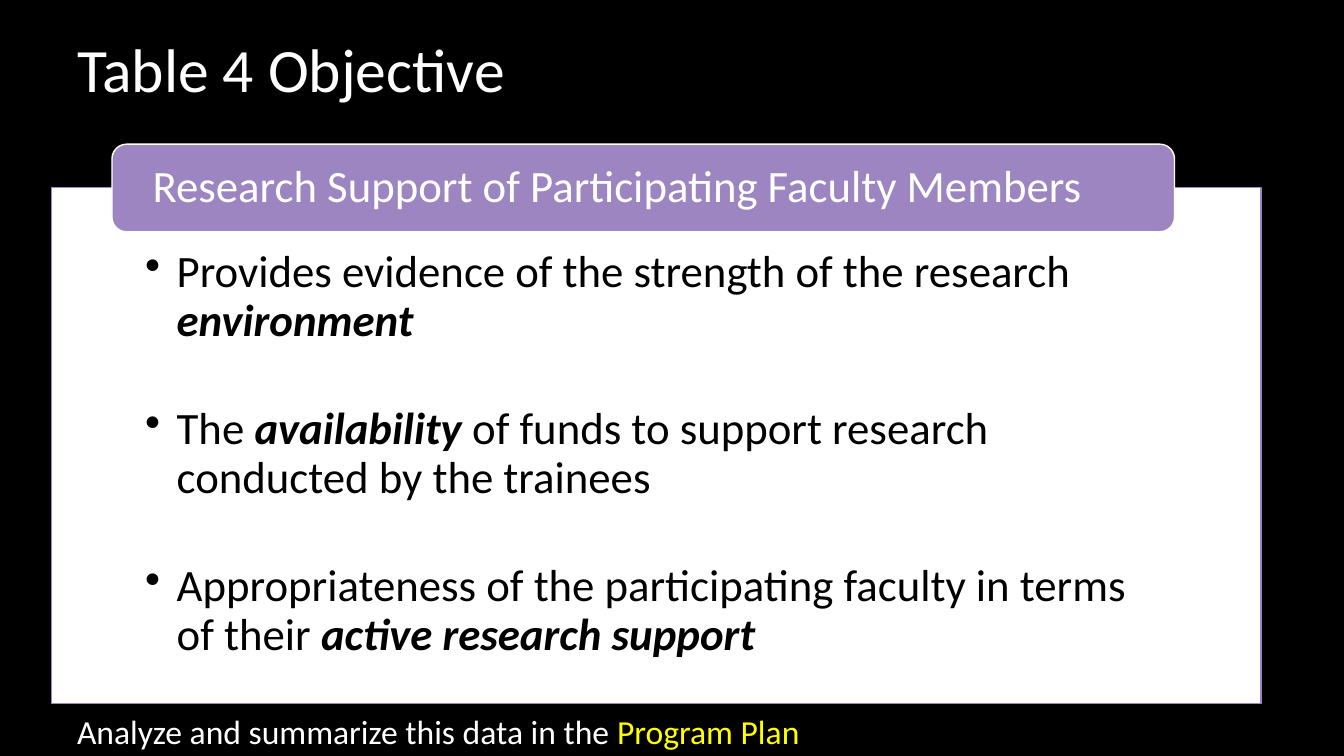
from dataclasses import dataclass

from lxml.etree import SubElement
from pptx import Presentation
from pptx.dml.color import RGBColor
from pptx.enum.shapes import MSO_SHAPE as Preset
from pptx.enum.text import MSO_ANCHOR as Anchor, PP_ALIGN as Align
from pptx.oxml.ns import qn
from pptx.util import Pt

COLORS = {
    "black": "000000",
    "white": "FFFFFF",
    "purple": "9C85C0",
    "yellow": "FFFF00",
}
FONT = "Calibri"


@dataclass(frozen=True)
class Span:
    text: str
    strong: bool = False
    color: str | None = None


@dataclass(frozen=True)
class Box:
    left: float
    top: float
    width: float
    height: float


@dataclass(frozen=True)
class Panel:
    preset: Preset
    box: Box
    fill: str
    line: str
    insets: tuple[float, float]
    anchor: Anchor


OBJECTIVES = [
    [Span("Provides evidence of the strength of the research "),
     Span("environment", strong=True)],
    [Span("The "), Span("availability", strong=True),
     Span(" of funds to support research conducted by the trainees")],
    [Span("Appropriateness of the participating faculty in terms of their "),
     Span("active research support", strong=True)],
]
OBJECTIVES_PANEL = Panel(Preset.RECTANGLE, Box(36.7, 134, 864, 368.6),
                         "white", "purple", (67, 44), Anchor.TOP)
HEADING_PANEL = Panel(Preset.ROUNDED_RECTANGLE, Box(80, 103, 759, 62.6),
                      "purple", "white", (26, 3), Anchor.MIDDLE)


def rgb(name: str) -> RGBColor:
    return RGBColor.from_string(COLORS[name])


def place(shape, box: Box) -> None:
    shape.left, shape.top = Pt(box.left), Pt(box.top)
    shape.width, shape.height = Pt(box.width), Pt(box.height)


def write(paragraph, spans: list[Span], size: float, color: str,
          spacing: float = 1.0) -> None:
    paragraph.alignment = Align.LEFT
    paragraph.line_spacing = spacing
    paragraph.font.name = FONT
    paragraph.font.size = Pt(size)
    paragraph.font.color.rgb = rgb(color)
    for span in spans:
        run = paragraph.add_run()
        run.text = span.text
        if span.strong:
            run.font.bold = run.font.italic = True
        if span.color:
            run.font.color.rgb = rgb(span.color)


def add_bullet(paragraph, indent: float) -> None:
    properties = paragraph._p.get_or_add_pPr()
    properties.set("marL", str(Pt(indent)))
    properties.set("indent", str(-Pt(indent)))
    SubElement(properties, qn("a:buChar"), char="•")


def add_panel(slide, panel: Panel):
    shape = slide.shapes.add_shape(panel.preset, 0, 0, 0, 0)
    place(shape, panel.box)
    shape.shadow.inherit = False
    shape.fill.solid()
    shape.fill.fore_color.rgb = rgb(panel.fill)
    shape.line.color.rgb = rgb(panel.line)
    shape.line.width = Pt(1)
    frame = shape.text_frame
    frame.word_wrap = True
    frame.vertical_anchor = panel.anchor
    side, top = panel.insets
    frame.margin_left = frame.margin_right = Pt(side)
    frame.margin_top = frame.margin_bottom = Pt(top)
    return frame


def main() -> None:
    presentation = Presentation()
    presentation.slide_width, presentation.slide_height = Pt(960), Pt(540)
    slide = presentation.slides.add_slide(presentation.slide_layouts[5])
    slide.background.fill.solid()
    slide.background.fill.fore_color.rgb = rgb("black")

    title = slide.shapes.title
    place(title, Box(48, 13.7, 864, 75.6))
    title.text_frame.vertical_anchor = Anchor.MIDDLE
    write(title.text_frame.paragraphs[0], [Span("Table 4 Objective")],
          44, "white", 0.9)

    advice = slide.shapes.add_textbox(0, 0, 0, 0)
    place(advice, Box(48, 504, 715, 36))
    advice.text_frame.word_wrap = True
    write(advice.text_frame.paragraphs[0],
          [Span("Analyze and summarize this data in the "),
           Span("Program Plan", color="yellow")], 24, "white")

    objectives = add_panel(slide, OBJECTIVES_PANEL)
    for index, spans in enumerate(OBJECTIVES):
        paragraph = objectives.add_paragraph() if index else objectives.paragraphs[0]
        add_bullet(paragraph, 22.5)
        paragraph.space_before = Pt(43 if index else 0)
        write(paragraph, spans, 32, "black", 0.9)

    heading = add_panel(slide, HEADING_PANEL)
    write(heading.paragraphs[0],
          [Span("Research Support of Participating Faculty Members")],
          32, "white", 0.9)

    presentation.save("out.pptx")


if __name__ == "__main__":
    main()
